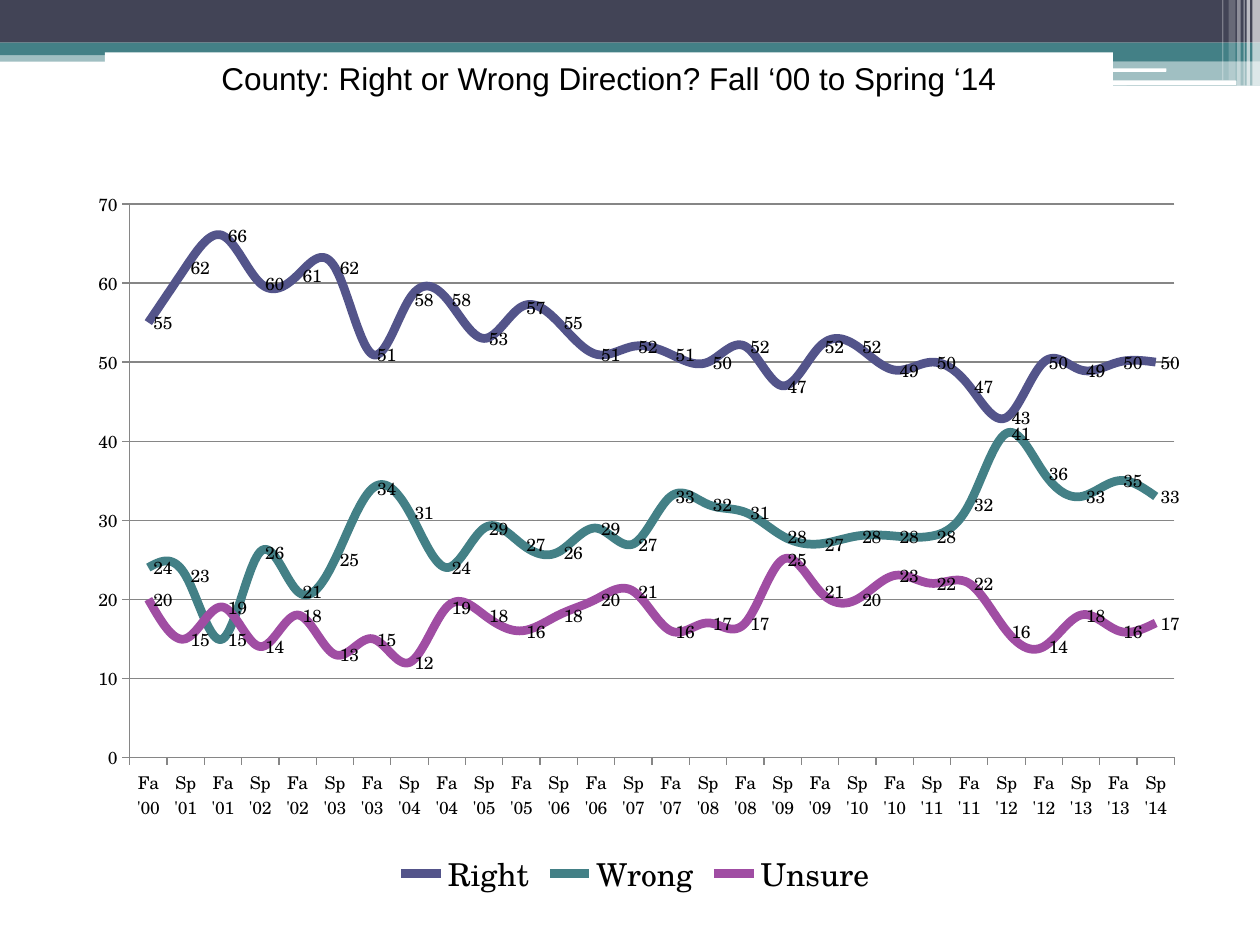
from dataclasses import dataclass

from lxml import etree
from pptx import Presentation
from pptx.chart.data import CategoryChartData
from pptx.dml.color import RGBColor
from pptx.enum import chart as charts, shapes, text
from pptx.oxml import ns
from pptx.util import Pt


@dataclass(frozen=True)
class Theme:
    navy: str = "424456"
    teal: str = "438086"
    white: str = "FFFFFF"
    black: str = "000000"
    grid: str = "868686"
    right: str = "53548A"
    unsure: str = "A04DA3"
    title_font: str = "Arial"
    chart_font: str = "TeX Gyre Schola"
    title_size: float = 18
    chart_size: float = 10
    line_width: float = 5


def set_all(target, values):
    for name, value in values.items():
        setattr(target, name, value)


def add_node(parent, tag, **attributes):
    return etree.SubElement(parent, ns.qn(tag), attributes)


class SlideBuilder:
    def __init__(self, theme, page):
        self.theme = theme
        self.page = page

    def set_font(self, font, name, size):
        set_all(font, {"name": name, "size": Pt(size), "bold": False})
        font.color.rgb = RGBColor.from_string(self.theme.black)

    def bar(self, left, top, width, height, color, opacity=100, rounded=False):
        kind = shapes.MSO_SHAPE.ROUNDED_RECTANGLE if rounded else shapes.MSO_SHAPE.RECTANGLE
        box = self.page.shapes.add_shape(kind, Pt(left), Pt(top), Pt(width), Pt(height))
        box.shadow.inherit = False
        box.line.fill.background()
        box.fill.solid()
        box.fill.fore_color.rgb = RGBColor.from_string(color)
        if opacity < 100:
            color_node = box.fill._xPr.find(ns.qn("a:solidFill"))[0]
            add_node(color_node, "a:alpha", val=str(opacity * 1000))
        return box

    def title(self, words, left, top, width, height):
        box = self.bar(left, top, width, height, self.theme.white)
        set_all(box.text_frame, {"word_wrap": True,
                                 "vertical_anchor": text.MSO_ANCHOR.MIDDLE})
        para = box.text_frame.paragraphs[0]
        para.alignment = text.PP_ALIGN.CENTER
        span = para.add_run()
        span.text = words
        self.set_font(span.font, self.theme.title_font, self.theme.title_size)

    def line_chart(self, left, top, width, height, categories, series, plot_layout):
        theme = self.theme
        data = CategoryChartData()
        data.categories = categories
        for name, (_, values) in series.items():
            data.add_series(name, values)
        chart = self.page.shapes.add_chart(
            charts.XL_CHART_TYPE.LINE, Pt(left), Pt(top), Pt(width), Pt(height), data).chart
        set_all(chart, {"has_title": False, "has_legend": True})
        self.set_font(chart.font, theme.chart_font, theme.chart_size)
        set_all(chart.legend, {"position": charts.XL_LEGEND_POSITION.BOTTOM,
                               "include_in_layout": False})
        self.set_font(chart.legend.font, theme.chart_font, theme.title_size)

        # Axes and gridlines
        set_all(chart.value_axis, {"minimum_scale": 0, "maximum_scale": 70, "major_unit": 10,
                                   "has_major_gridlines": True})
        for axis in (chart.category_axis, chart.value_axis):
            axis.major_tick_mark = charts.XL_TICK_MARK.OUTSIDE
            self.grid_line(axis.format.line)
        self.grid_line(chart.value_axis.major_gridlines.format.line)

        # Smoothed series with a value beside each point
        chart.plots[0].vary_by_categories = False
        for line, (color, _) in zip(chart.plots[0].series, series.values()):
            line.smooth = True
            line.marker.style = charts.XL_MARKER_STYLE.NONE
            line.format.line.width = Pt(theme.line_width)
            line.format.line.color.rgb = RGBColor.from_string(color)
            set_all(line.data_labels, {"show_value": True,
                                       "position": charts.XL_LABEL_POSITION.RIGHT})
            self.set_font(line.data_labels.font, theme.chart_font, theme.chart_size)

        # Fixed inner plot area, as fractions of the chart
        plot_area = chart._chartSpace.chart.plotArea
        for old in plot_area.findall(ns.qn("c:layout")):
            plot_area.remove(old)
        layout = etree.Element(ns.qn("c:layout"))
        plot_area.insert(0, layout)
        manual = add_node(layout, "c:manualLayout")
        settings = {"layoutTarget": "inner", "xMode": "edge", "yMode": "edge", **plot_layout}
        for name, value in settings.items():
            add_node(manual, f"c:{name}", val=str(value))

    def grid_line(self, line):
        line.width = Pt(0.75)
        line.color.rgb = RGBColor.from_string(self.theme.grid)


def main():
    theme = Theme()
    deck = Presentation()
    set_all(deck, {"slide_width": Pt(720), "slide_height": Pt(540)})
    slide = SlideBuilder(theme, deck.slides.add_slide(deck.slide_layouts[6]))

    # Header bands
    slide.bar(0, 28.8, 720, 6.5, theme.teal, 50)
    slide.bar(0, 0, 720, 24.4, theme.navy)
    slide.bar(0, 24.4, 720, 7.2, theme.teal)
    slide.bar(426, 28, 294, 7, theme.teal)
    slide.bar(426, 35, 294, 14, theme.teal, 50)
    slide.bar(425.5, 39, 241, 2, theme.white, rounded=True)
    slide.bar(580.5, 46, 126, 2.6, theme.white, rounded=True)

    # Pale stripes at the right edge: left, width, height, opacity
    for left, width, height, opacity in (
            (715.6, 4.4, 49, 65), (712.3, 2, 49, 65), (710.6, 0.7, 49, 60),
            (707, 2, 49, 40), (702, 4, 46, 20), (698.4, 0.7, 46, 30)):
        slide.bar(left, 0, width, height, theme.white, opacity)

    slide.title("County: Right or Wrong Direction? Fall ‘00 to Spring ‘14", 60, 30, 576, 29)

    # Polls run every fall and the following spring
    terms = [f"{term} '{year + shift:02d}"
             for year in range(14) for term, shift in (("Fa", 0), ("Sp", 1))]
    answers = {
        "Right": (theme.right, [55, 62, 66, 60, 61, 62, 51, 58, 58, 53, 57, 55, 51, 52,
                                51, 50, 52, 47, 52, 52, 49, 50, 47, 43, 50, 49, 50, 50]),
        "Wrong": (theme.teal, [24, 23, 15, 26, 21, 25, 34, 31, 24, 29, 27, 26, 29, 27,
                               33, 32, 31, 28, 27, 28, 28, 28, 32, 41, 36, 33, 35, 33]),
        "Unsure": (theme.unsure, [20, 15, 19, 14, 18, 13, 15, 12, 19, 18, 16, 18, 20, 21,
                                  16, 17, 17, 25, 21, 20, 23, 22, 22, 16, 14, 18, 16, 17]),
    }
    slide.line_chart(42, 100, 642, 416, terms, answers,
                     {"x": 0.05, "y": 0.04, "w": 0.93, "h": 0.76})

    deck.save("out.pptx")


if __name__ == "__main__":
    main()
